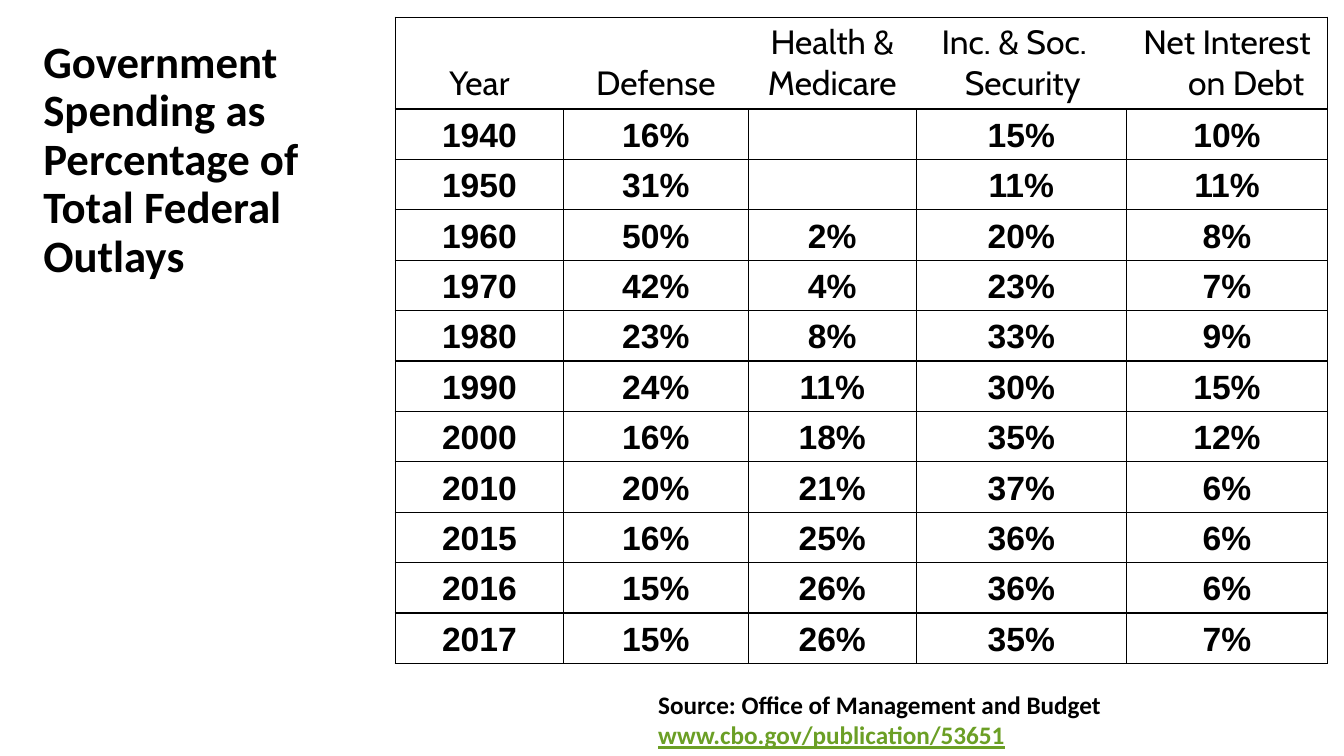
"""Build a slide with a table of federal spending shares by year."""
from dataclasses import dataclass

from lxml.etree import SubElement
from pptx import Presentation
from pptx.dml.color import RGBColor
from pptx.enum.text import MSO_ANCHOR as Anchor, MSO_AUTO_SIZE as AutoSize, PP_ALIGN as Align
from pptx.oxml.ns import qn
from pptx.util import Inches, Pt


@dataclass(frozen=True)
class Theme:
    ink: str = "000000"
    link: str = "6B9F25"
    text_font: str = "Calibri"
    header_font: str = "Cabin"
    data_font: str = "Arial"
    title_size: int = 32
    table_size: int = 24
    source_size: int = 18
    border: int = 1


@dataclass(frozen=True)
class Column:
    header: str
    width: float
    align: Align = Align.CENTER
    indent: float = -0.38


THEME = Theme()
HANGING = 0.38
HEADER_HEIGHT, ROW_HEIGHT = 0.9, 0.5
COLUMNS = [
    Column("Year", 1.67),
    Column("Defense", 1.83),
    Column("Health &\nMedicare", 1.67),
    Column("Inc. & Soc. Security", 2.08, Align.LEFT, -0.23),
    Column("Net Interest on Debt", 2),
]
SPENDING = [
    (1940, 16, None, 15, 10),
    (1950, 31, None, 11, 11),
    (1960, 50, 2, 20, 8),
    (1970, 42, 4, 23, 7),
    (1980, 23, 8, 33, 9),
    (1990, 24, 11, 30, 15),
    (2000, 16, 18, 35, 12),
    (2010, 20, 21, 37, 6),
    (2015, 16, 25, 36, 6),
    (2016, 15, 26, 36, 6),
    (2017, 15, 26, 35, 7),
]


def style(font, name: str, size: int, bold: bool, color: str = THEME.ink) -> None:
    """Set the face, size, weight and colour of a font."""
    font.name, font.size, font.bold = name, Pt(size), bold
    font.color.rgb = RGBColor.from_string(color)


def add_borders(cell, left: bool, right: bool) -> None:
    """Draw the top and bottom borders and the chosen side borders."""
    tc_pr = cell._tc.get_or_add_tcPr()
    for side, shown in (("L", left), ("R", right), ("T", True), ("B", True)):
        ln = SubElement(tc_pr, qn(f"a:ln{side}"), w=str(Pt(THEME.border)))
        if shown:
            fill = SubElement(ln, qn("a:solidFill"))
            SubElement(fill, qn("a:srgbClr"), val=THEME.ink)
        else:
            SubElement(ln, qn("a:noFill"))


def fill_cell(cell, text: str, font: str, bold: bool, align: Align, indent: float) -> None:
    """Write a bottom-anchored cell with hanging paragraphs."""
    cell.fill.background()
    cell.vertical_anchor = Anchor.BOTTOM
    cell.text_frame.text = text
    for p in cell.text_frame.paragraphs:
        p.alignment = align
        p_pr = p._p.get_or_add_pPr()
        p_pr.set("marL", str(Inches(HANGING)))
        p_pr.set("indent", str(Inches(indent)))
        for r in p.runs:
            style(r.font, font, THEME.table_size, bold)


def add_title(s) -> None:
    """Place and format the title."""
    sp = s.shapes.title
    sp.left, sp.top, sp.width, sp.height = map(Inches, (0.33, 0.17, 3.58, 3.33))
    tf = sp.text_frame
    tf.text = "Government Spending as Percentage of Total Federal Outlays"
    tf.word_wrap, tf.auto_size = True, AutoSize.NONE
    tf.vertical_anchor, tf.margin_bottom = Anchor.MIDDLE, Inches(0.53)
    p = tf.paragraphs[0]
    p.alignment, p.line_spacing = Align.LEFT, 0.9
    style(p.runs[0].font, THEME.text_font, THEME.title_size, True)


def add_spending_table(s) -> None:
    """Add the table of spending shares."""
    height = HEADER_HEIGHT + ROW_HEIGHT * len(SPENDING)
    width = sum(column.width for column in COLUMNS)
    table = s.shapes.add_table(len(SPENDING) + 1, len(COLUMNS), Inches(3.92), Inches(0.17),
                               Inches(width), Inches(height)).table
    table.first_row = table.horz_banding = False
    for i, row in enumerate(table.rows):
        row.height = Inches(ROW_HEIGHT if i else HEADER_HEIGHT)
    last = len(COLUMNS) - 1
    for j, column in enumerate(COLUMNS):
        table.columns[j].width = Inches(column.width)
        header = table.cell(0, j)
        add_borders(header, j == 0, j == last)
        fill_cell(header, column.header, THEME.header_font, False, column.align, column.indent)
        for i, values in enumerate(SPENDING, 1):
            value = values[j]
            text = "" if value is None else f"{value}%" if j else str(value)
            cell = table.cell(i, j)
            add_borders(cell, True, True)
            fill_cell(cell, text, THEME.data_font, True, Align.CENTER, -HANGING)


def add_source(s) -> None:
    """Add the source line with its web address."""
    tf = s.shapes.add_textbox(*map(Inches, (6.43, 6.79, 6.92, 0.71))).text_frame
    tf.word_wrap = True
    p = tf.paragraphs[0]
    for text, color in (("Source: Office of Management and Budget ", THEME.ink),
                        ("www.cbo.gov/publication/53651", THEME.link)):
        r = p.add_run()
        r.text = text
        style(r.font, THEME.text_font, THEME.source_size, True, color)
        r.font.underline = color == THEME.link


def main() -> None:
    """Build and save the presentation."""
    prs = Presentation()
    prs.slide_width, prs.slide_height = Inches(13.33), Inches(7.5)
    s = prs.slides.add_slide(prs.slide_layouts[5])
    add_title(s)
    add_spending_table(s)
    add_source(s)
    prs.save("out.pptx")


if __name__ == "__main__":
    main()
